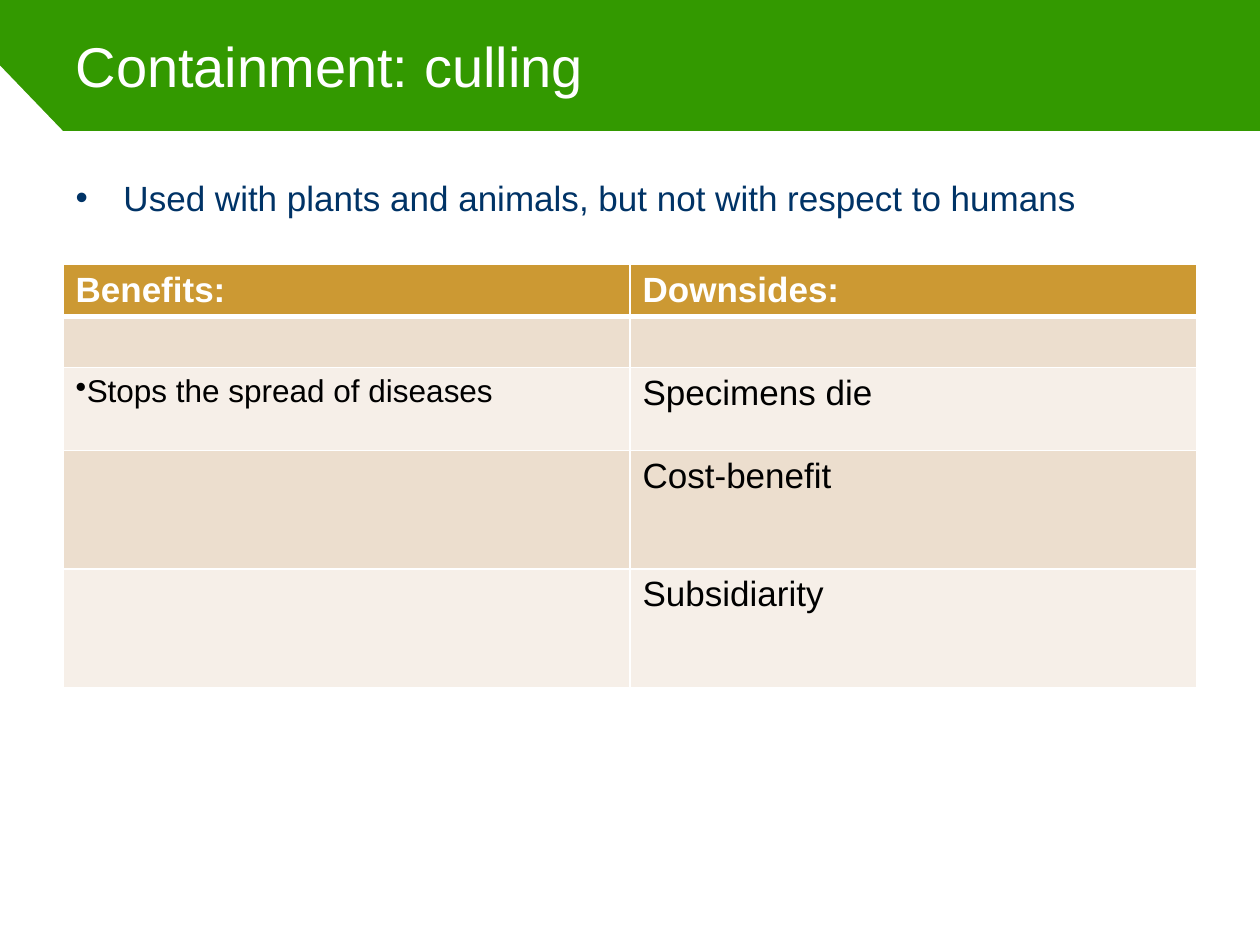
from lxml import etree
from pptx import Presentation
from pptx import util as u
from pptx.dml.color import RGBColor
from pptx.enum import text
from pptx.oxml.ns import qn

GREEN = RGBColor(0x33, 0x99, 0x00)
WHITE = RGBColor(0xFF, 0xFF, 0xFF)
BLACK = RGBColor(0x00, 0x00, 0x00)
NAVY = RGBColor(0x00, 0x33, 0x66)
GOLD = RGBColor(0xCC, 0x99, 0x33)
SAND = RGBColor(0xEC, 0xDE, 0xCE)
CREAM = RGBColor(0xF6, 0xEF, 0xE8)

MARGIN, CONTENT_WIDTH, BAND = 0.5, 9, 1.04


class Deck:
    """Holds the style and the current slide; lengths are in inches,
    on a 10 by 7.5 grid of one-inch columns and rows."""

    font = "Arial"
    columns, rows = 10, 7.5

    def __init__(self):
        self.prs = Presentation()
        self.prs.slide_width = u.Inches(self.columns)
        self.prs.slide_height = u.Inches(self.rows)
        self.s = self.prs.slides.add_slide(self.prs.slide_layouts[1])
        fill = self.s.background.fill
        fill.solid()
        fill.fore_color.rgb = GREEN

    def run(self, p, words, size, color, bold=False):
        r = p.add_run()
        r.text = words
        r.font.name, r.font.size, r.font.bold = self.font, u.Pt(size), bold
        r.font.color.rgb = color

    def bullet(self, p, indent=0):
        pPr = p._p.get_or_add_pPr()
        pPr.set("marL", str(u.Inches(indent)))
        pPr.set("indent", str(-u.Inches(indent)))
        etree.SubElement(pPr, qn("a:buChar")).set("char", "•")

    def panel(self, points):
        """Draws the white page area behind everything else."""
        start, *rest = [(u.Inches(x), u.Inches(y)) for x, y in points]
        builder = self.s.shapes.build_freeform(*start)
        builder.add_line_segments(rest, close=True)
        sp = builder.convert_to_shape()
        sp.shadow.inherit = False
        sp.fill.solid()
        sp.fill.fore_color.rgb = WHITE
        sp.line.fill.background()
        self.s.shapes._spTree.insert(2, sp._element)

    def place(self, sp, top, height, anchor):
        """Moves a placeholder into the content column; gives its first paragraph."""
        sp.left, sp.top = u.Inches(MARGIN), u.Inches(top)
        sp.width, sp.height = u.Inches(CONTENT_WIDTH), u.Inches(height)
        tf = sp.text_frame
        tf.word_wrap = True
        tf.auto_size = text.MSO_AUTO_SIZE.NONE
        tf.vertical_anchor = anchor
        p = tf.paragraphs[0]
        p.alignment = text.PP_ALIGN.LEFT
        p.space_before = u.Pt(0)
        return p

    def title(self, words):
        p = self.place(self.s.shapes.title, 0, BAND, text.MSO_ANCHOR.MIDDLE)
        self.run(p, words, 32, WHITE)

    def body(self, words, top, height):
        p = self.place(self.s.placeholders[1], top, height, text.MSO_ANCHOR.TOP)
        p.space_after = u.Pt(6)
        self.bullet(p, 0.38)
        self.run(p, words, 20, NAVY)

    def border(self, cell, side, width):
        ln = etree.SubElement(cell._tc.get_or_add_tcPr(), qn("a:" + side))
        ln.set("w", str(u.Pt(width)))
        fill = etree.SubElement(ln, qn("a:solidFill"))
        etree.SubElement(fill, qn("a:srgbClr")).set("val", str(WHITE))

    def cell(self, cell, words, row):
        header = row == 0
        for side in ("lnL", "lnR", "lnT", "lnB"):
            heavy = (header and side == "lnB") or (row == 1 and side == "lnT")
            self.border(cell, side, 3 if heavy else 1)
        cell.fill.solid()
        cell.fill.fore_color.rgb = GOLD if header else (CREAM, SAND)[row % 2]
        if not words:
            return
        p = cell.text_frame.paragraphs[0]
        size = 20
        if words.startswith("•"):
            self.bullet(p)
            words, size = words[1:], 18
        self.run(p, words, size, WHITE if header else BLACK, header)

    def table(self, data, top, heights):
        frame = self.s.shapes.add_table(
            len(data), len(data[0]), u.Inches(MARGIN), u.Inches(top),
            u.Inches(CONTENT_WIDTH), u.Inches(sum(heights)))
        for i, (line, height) in enumerate(zip(data, heights)):
            frame.table.rows[i].height = u.Inches(height)
            for j, words in enumerate(line):
                self.cell(frame.table.cell(i, j), words, i)


def main():
    deck = Deck()
    right, bottom = deck.columns, deck.rows
    deck.panel([(MARGIN, BAND), (0, BAND / 2), (0, bottom),
                (right, bottom), (right, BAND)])
    deck.title("Containment: culling")
    deck.body("Used with plants and animals, but not with respect to humans",
              1.35, 5.12)
    deck.table([("Benefits:", "Downsides:"),
                ("", ""),
                ("•Stops the spread of diseases", "Specimens die"),
                ("", "Cost-benefit"),
                ("", "Subsidiarity")],
               2.1, [0.4, 0.4, 0.66, 0.94, 0.94])
    deck.prs.save("out.pptx")


if __name__ == "__main__":
    main()
